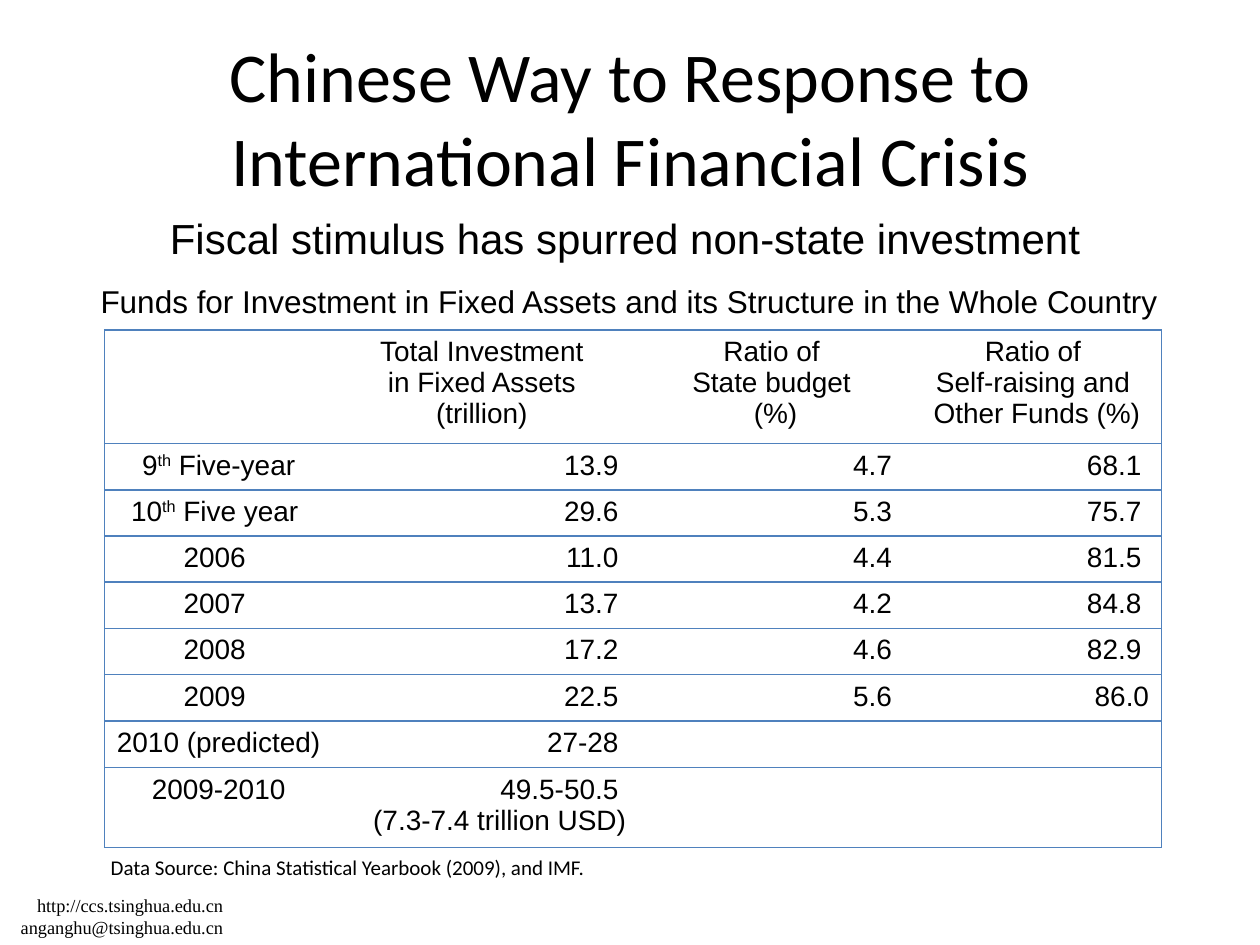
from dataclasses import dataclass

from lxml.etree import SubElement
from pptx import Presentation
from pptx.dml.color import RGBColor
from pptx.enum.text import MSO_ANCHOR, PP_ALIGN
from pptx.oxml.ns import qn
from pptx.util import Inches, Pt


@dataclass(frozen=True)
class Theme:
    ink: RGBColor = RGBColor(0, 0, 0)
    paper: RGBColor = RGBColor(255, 255, 255)
    rule: str = "4F81BD"
    rule_width: int = Pt(1)
    sans: str = "Arial"
    body: str = "Calibri"
    serif: str = "Times New Roman"
    title: float = 40
    subtitle: float = 24
    caption: float = 18
    cell: float = 16
    source: float = 12
    footer: float = 10.5


THEME = Theme()


@dataclass(frozen=True)
class TextBox:
    lines: tuple[str, ...]
    left: float
    top: float
    width: float
    height: float
    size: float
    font: str
    align: PP_ALIGN = PP_ALIGN.LEFT
    anchor: MSO_ANCHOR = MSO_ANCHOR.TOP


@dataclass(frozen=True)
class Row:
    label: str
    values: tuple[str, str, str]
    height: float = 0.35
    ordinal: str = ""  # raised "th" and the words after it follow the label
    rest: str = ""


LEFT, CENTER, RIGHT = PP_ALIGN.LEFT, PP_ALIGN.CENTER, PP_ALIGN.RIGHT

TEXTS = (
    TextBox(("http://ccs.tsinghua.edu.cn", "anganghu@tsinghua.edu.cn"),
            -0.08, 7.05, 1.95, 0.45, THEME.footer, THEME.serif, RIGHT),
    TextBox(("Chinese Way to Response to International Financial Crisis",),
            0.5, 0.3, 9, 1.25, THEME.title, THEME.body, CENTER, MSO_ANCHOR.MIDDLE),
    TextBox(("Fiscal stimulus has spurred non-state investment",),
            1.25, 1.64, 7.73, 0.5, THEME.subtitle, THEME.sans),
    TextBox(("Funds for Investment in Fixed Assets and its Structure in the Whole Country",),
            0.7, 2.19, 8.67, 0.4, THEME.caption, THEME.sans),
    TextBox(("Data Source: China Statistical Yearbook (2009), and IMF.",),
            0.78, 6.73, 7.58, 0.3, THEME.source, THEME.body),
)

COLUMN_WIDTHS = (1.81, 2.43, 2.17, 1.98)
HANGING = 0.38
LABEL_MARGIN = 0.07  # keeps the longest row label on one line
NO_STYLE = "{2D5ABB26-0587-4C30-8999-92F81FD0307C}"

ROWS = (
    Row("", ("Total Investment \nin Fixed Assets \n(trillion) ",
             "Ratio of \nState budget \n(%)",
             "Ratio of \nSelf-raising and \nOther Funds (%)"), 0.85),
    Row("9", ("13.9 ", "4.7 ", "68.1 "), ordinal="th", rest=" Five-year"),
    Row("10", ("29.6 ", "5.3 ", "75.7 "), ordinal="th", rest=" Five year "),
    Row("2006 ", ("11.0 ", "4.4 ", "81.5 ")),
    Row("2007 ", ("13.7 ", "4.2 ", "84.8 ")),
    Row("2008 ", ("17.2 ", "4.6 ", "82.9 ")),
    Row("2009 ", ("22.5 ", "5.6 ", "86.0")),
    Row("2010 (predicted)", ("27-28 ", "", ""), 0.37),
    Row("2009-2010", ("49.5-50.5 \n(7.3-7.4 trillion USD)", "", ""), 0.6),
)


def add_run(p, text: str, size: float, font: str, raised: bool = False) -> None:
    r = p.add_run()
    r.text = text
    r.font.size = Pt(size)
    r.font.name = font
    r.font.color.rgb = THEME.ink
    if raised:
        r.font._element.set("baseline", "30000")


def add_lines(tf, lines, size: float, font: str, align: PP_ALIGN) -> None:
    for i, line in enumerate(lines):
        p = tf.add_paragraph() if i else tf.paragraphs[0]
        p.alignment = align
        if line:
            add_run(p, line, size, font)
        else:
            end = SubElement(p._p, qn("a:endParaRPr"), sz=str(int(size * 100)))
            SubElement(end, qn("a:latin"), typeface=font)


def add_text(s, box: TextBox) -> None:
    sp = s.shapes.add_textbox(Inches(box.left), Inches(box.top),
                              Inches(box.width), Inches(box.height))
    tf = sp.text_frame
    tf.word_wrap = True
    tf.vertical_anchor = box.anchor
    add_lines(tf, box.lines, box.size, box.font, box.align)


def style_cell(cell, sides: str) -> None:
    """Rule the given sides (in the order L, R, T, B) and fill the cell."""
    tcPr = cell._tc.get_or_add_tcPr()
    for side in sides:
        ln = SubElement(tcPr, qn(f"a:ln{side}"), w=str(THEME.rule_width))
        fill = SubElement(ln, qn("a:solidFill"))
        SubElement(fill, qn("a:srgbClr"), val=THEME.rule)
    cell.fill.solid()
    cell.fill.fore_color.rgb = THEME.paper


def add_investment_table(s, left: float, top: float) -> None:
    width, height = sum(COLUMN_WIDTHS), sum(row.height for row in ROWS)
    tbl = s.shapes.add_table(len(ROWS), len(COLUMN_WIDTHS), Inches(left), Inches(top),
                             Inches(width), Inches(height)).table
    tbl.first_row = tbl.horz_banding = False
    tbl._tbl.tblPr.find(qn("a:tableStyleId")).text = NO_STYLE
    for column, column_width in zip(tbl.columns, COLUMN_WIDTHS):
        column.width = Inches(column_width)

    last = len(COLUMN_WIDTHS) - 1
    for i, row in enumerate(ROWS):
        tbl.rows[i].height = Inches(row.height)
        for j, text in enumerate((row.label, *row.values)):
            cell = tbl.cell(i, j)
            # Headings and row labels are centred, figures align right
            align = CENTER if i == 0 or j == 0 else RIGHT
            add_lines(cell.text_frame, text.split("\n"), THEME.cell, THEME.sans, align)
            if j == 0:
                cell.margin_left = cell.margin_right = Inches(LABEL_MARGIN)
            if j == 0 and row.ordinal:
                p = cell.text_frame.paragraphs[0]
                add_run(p, row.ordinal, THEME.cell, THEME.sans, raised=True)
                add_run(p, row.rest, THEME.cell, THEME.sans)
            if text != "86.0":  # this figure alone has no hanging indent
                for p in cell.text_frame.paragraphs:
                    pPr = p._p.get_or_add_pPr()
                    pPr.set("marL", str(Inches(HANGING)))
                    pPr.set("indent", str(-Inches(HANGING)))
            style_cell(cell, {0: "L", last: "R"}.get(j, "") + "TB")


def main() -> None:
    prs = Presentation()
    prs.slide_width, prs.slide_height = Inches(10), Inches(7.5)
    s = prs.slides.add_slide(prs.slide_layouts[6])

    # Title, subtitle, caption, source and contact lines
    for box in TEXTS:
        add_text(s, box)

    # Investment figures
    add_investment_table(s, 0.83, 2.62)
    prs.save("out.pptx")


if __name__ == "__main__":
    main()
